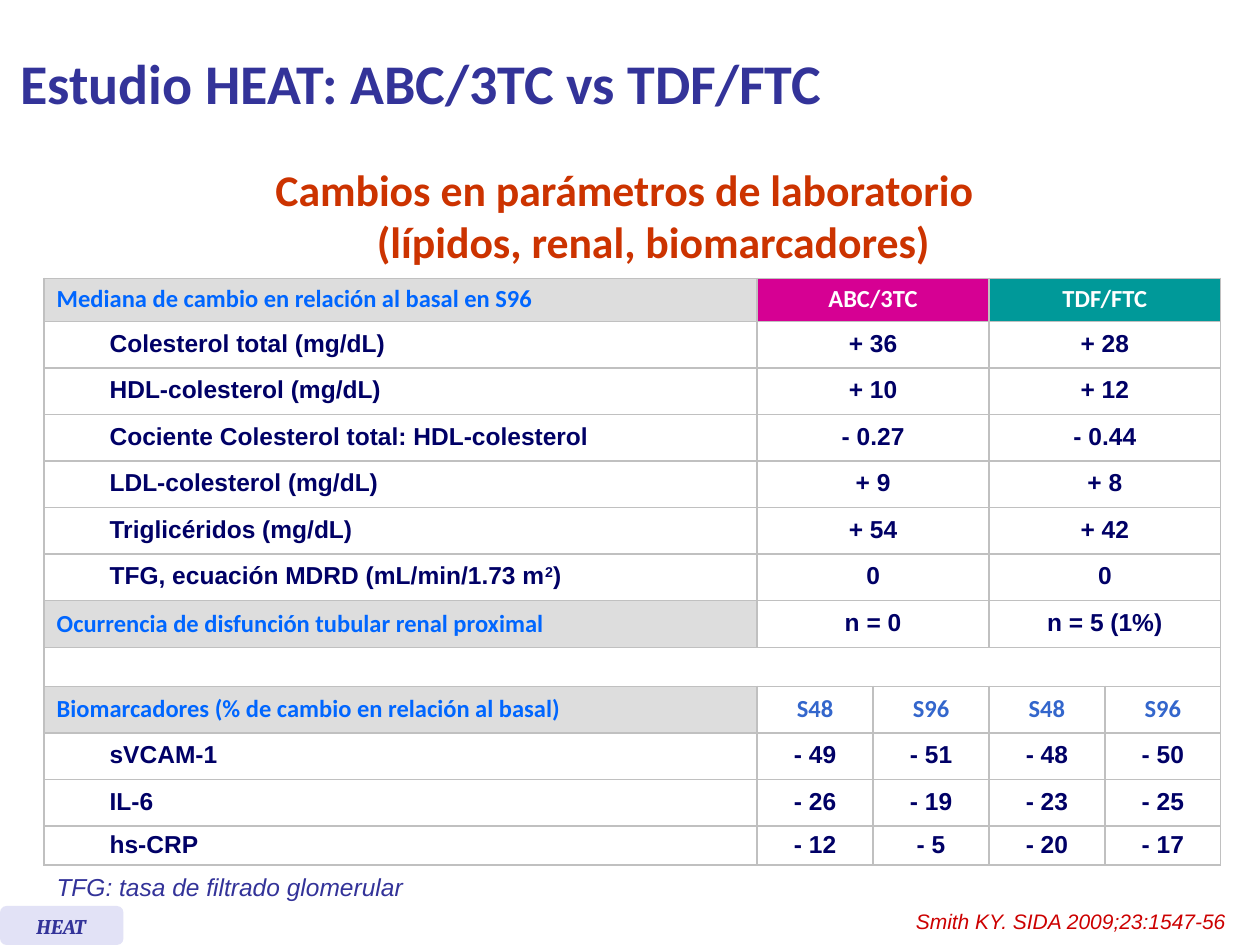
from lxml import etree
from pptx import Presentation
from pptx import util as u
from pptx.dml.color import RGBColor
from pptx.enum import shapes, text
from pptx.oxml.ns import qn

NAVY, INDIGO, BLUE, GRAY, WHITE = "000066", "333399", "0066FF", "DDDDDD", "FFFFFF"
BORDER = "C0C0C0"
CENTER, LEFT = text.PP_ALIGN.CENTER, text.PP_ALIGN.LEFT

COLS = [0.42, 5.24] + [0.92] * 4
ROWS = [0.34] + [0.37] * 7 + [0.31] + [0.37] * 3 + [0.31]
HEADER = ["Mediana de cambio en relación al basal en S96", "ABC/3TC", "TDF/FTC"]
CHANGES = [
    ("Colesterol total (mg/dL)", "+ 36", "+ 28"),
    ("HDL-colesterol (mg/dL)", "+ 10", "+ 12"),
    ("Cociente Colesterol total: HDL-colesterol", "- 0.27", "- 0.44"),
    ("LDL-colesterol (mg/dL)", "+ 9", "+ 8"),
    ("Triglicéridos (mg/dL)", "+ 54", "+ 42"),
    ("TFG, ecuación MDRD (mL/min/1.73 m^2^)", "0", "0"),
]
TUBULAR = ["Ocurrencia de disfunción tubular renal proximal", "n = 0", "n = 5 (1%)"]
BIOMARKERS = ["Biomarcadores (% de cambio en relación al basal)", "S48", "S96", "S48", "S96"]
MARKERS = [
    ("sVCAM-1", "- 49", "- 51", "- 48", "- 50"),
    ("IL-6", "- 26", "- 19", "- 23", "- 25"),
    ("hs-CRP", "- 12", "- 5", "- 20", "- 17"),
]


def rgb(value):
    return RGBColor.from_string(value)


def add_run(p, words, size, font, color, bold=False, italic=False):
    r = p.add_run()
    r.text = words
    r.font.size = u.Pt(size)
    r.font.name = font
    r.font.bold = bold
    r.font.italic = italic
    r.font.color.rgb = rgb(color)
    return r


def add_text(parent, box, words, size, font, color, wrap=True, **style):
    sp = parent.add_textbox(*map(u.Inches, box))
    tf = sp.text_frame
    tf.word_wrap = wrap
    add_run(tf.paragraphs[0], words, size, font, color, **style)


def add_title(s):
    sp = s.shapes.title
    sp.left, sp.top, sp.width, sp.height = map(u.Inches, (0.06, 0.05, 8.96, 1.21))
    tf = sp.text_frame
    tf.vertical_anchor = text.MSO_ANCHOR.MIDDLE
    p = tf.paragraphs[0]
    p.alignment = LEFT
    add_run(p, "Estudio HEAT: ABC/3TC vs TDF/FTC", 32, "Calibri", INDIGO, bold=True)


def add_subtitle(s):
    sp = s.shapes.add_textbox(*map(u.Inches, (0.06, 1.24, 9.87, 0.71)))
    tf = sp.text_frame
    tf.word_wrap = True
    p = tf.paragraphs[0]
    p.alignment = CENTER
    pPr = p._p.get_or_add_pPr()
    pPr.set("marL", str(u.Inches(0.38)))
    pPr.set("indent", str(-u.Inches(0.38)))
    style = (25, "Calibri", "CC3300", True)
    add_run(p, "Cambios en parámetros de laboratorio ", *style)
    p.add_line_break()
    add_run(p, "(lípidos, renal, biomarcadores)", *style)


def set_borders(cell, hidden=""):
    tcPr = cell._tc.get_or_add_tcPr()
    for side in "LRTB":
        ln = etree.SubElement(tcPr, qn(f"a:ln{side}"), w=str(u.Pt(1)))
        if side == hidden:
            etree.SubElement(ln, qn("a:noFill"))
        else:
            fill = etree.SubElement(ln, qn("a:solidFill"))
            etree.SubElement(fill, qn("a:srgbClr"), val=BORDER)


def fill_cell(cell, words, font="Arial", color=NAVY, fill=WHITE, align=CENTER):
    cell.fill.solid()
    cell.fill.fore_color.rgb = rgb(fill)
    p = cell.text_frame.paragraphs[0]
    p.alignment = align
    p.line_spacing = 0.9
    for i, part in enumerate(words.split("^")):
        r = add_run(p, part, 14, font, color, bold=True)
        if i % 2:
            r.font._element.set("baseline", "30000")


def span(table, row, first, last):
    table.cell(row, first).merge(table.cell(row, last))
    return table.cell(row, first)


def add_heading(table, row, words):
    fill_cell(span(table, row, 0, 1), words, "Calibri", BLUE, GRAY, LEFT)


def add_label(table, row, words):
    table.cell(row, 0).fill.solid()
    table.cell(row, 0).fill.fore_color.rgb = rgb(WHITE)
    fill_cell(table.cell(row, 1), words, align=LEFT)


def add_pair(table, row, values):
    for col, value in zip((2, 4), values):
        fill_cell(span(table, row, col, col + 1), value)


def add_results(s):
    frame = s.shapes.add_table(len(ROWS), len(COLS), *map(u.Inches, (0.35, 2.21, 9.34, 4.66)))
    table = frame.table
    table.first_row = table.horz_banding = False
    for column, width in zip(table.columns, COLS):
        column.width = u.Inches(width)
    for row, height in zip(table.rows, ROWS):
        row.height = u.Inches(height)

    label_rows = [*range(1, 7), *range(10, 13)]
    for i, row in enumerate(table.rows):
        for j, cell in enumerate(row.cells):
            set_borders(cell, {0: "R", 1: "L"}.get(j, "") if i in label_rows else "")
            cell.vertical_anchor = text.MSO_ANCHOR.MIDDLE
            cell.fill.background()
            if i == 8 or (j == 0 and i in label_rows):
                cell.text_frame.paragraphs[0]._p.get_or_add_endParaRPr().set("sz", "1100")

    add_heading(table, 0, HEADER[0])
    for col, words, fill in zip((2, 4), HEADER[1:], ("D60093", "009999")):
        fill_cell(span(table, 0, col, col + 1), words, "Calibri", WHITE, fill)
    for row, (label, *values) in enumerate(CHANGES, 1):
        add_label(table, row, label)
        add_pair(table, row, values)
    add_heading(table, 7, TUBULAR[0])
    add_pair(table, 7, TUBULAR[1:])
    span(table, 8, 0, 5)
    add_heading(table, 9, BIOMARKERS[0])
    for col, week in enumerate(BIOMARKERS[1:], 2):
        fill_cell(table.cell(9, col), week, "Calibri", "3366CC")
    for row, (label, *values) in enumerate(MARKERS, 10):
        add_label(table, row, label)
        for col, value in enumerate(values, 2):
            fill_cell(table.cell(row, col), value)


def add_study_tag(s):
    group = s.shapes.add_group_shape()
    sp = group.shapes.add_shape(shapes.MSO_SHAPE.ROUNDED_RECTANGLE,
                                *map(u.Inches, (0, 7.19, 0.98, 0.31)))
    sp.shadow.inherit = False
    sp.fill.solid()
    sp.fill.fore_color.rgb = rgb("E2E2F6")
    sp.line.fill.background()
    add_text(group.shapes, (0.19, 7.2, 0.61, 0.3), "HEAT", 12, "Cambria", INDIGO,
             wrap=False, bold=True, italic=True)


def main():
    prs = Presentation()
    prs.slide_width, prs.slide_height = u.Inches(10), u.Inches(7.5)
    s = prs.slides.add_slide(prs.slide_layouts[5])
    add_title(s)
    add_subtitle(s)
    add_results(s)
    add_study_tag(s)
    add_text(s.shapes, (7.17, 7.16, 2.68, 0.3), "Smith KY. SIDA 2009;23:1547-56",
             12, "Arial", "CC0000", wrap=False, italic=True)
    add_text(s.shapes, (0.35, 6.87, 5.08, 0.33), "TFG: tasa de filtrado glomerular",
             14, "Arial", INDIGO, italic=True)
    prs.save("out.pptx")


if __name__ == "__main__":
    main()
